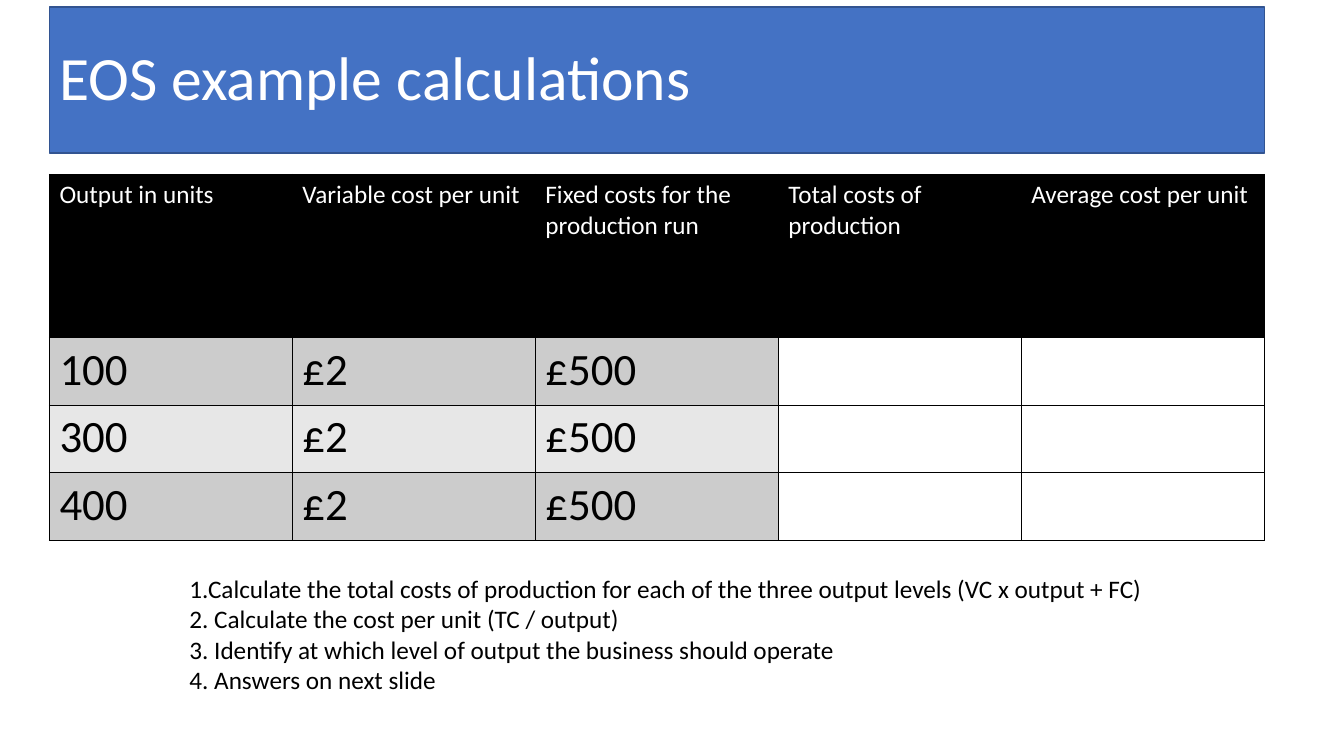
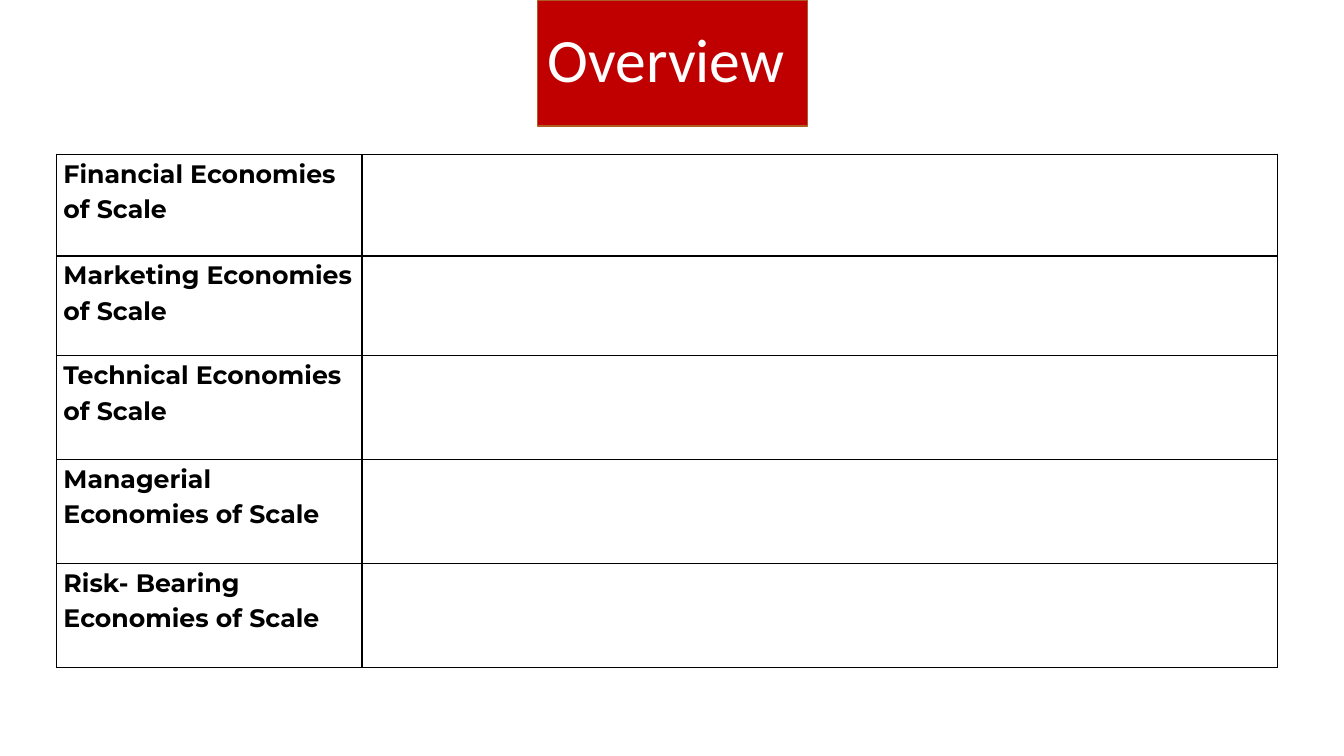
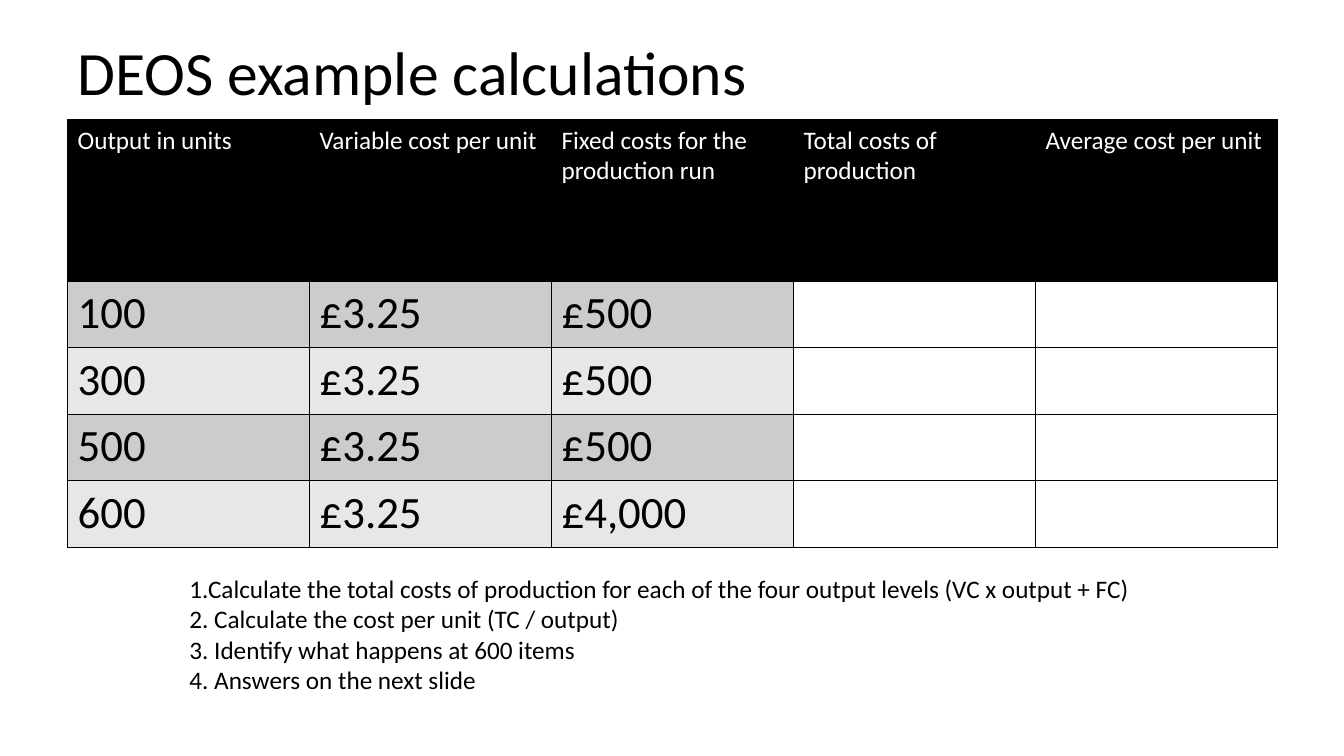
from lxml import etree
from pptx import Presentation
from pptx import util as u
from pptx.dml.color import RGBColor
from pptx.enum import shapes, text
from pptx.oxml.ns import qn

hue = RGBColor.from_string
BLACK, WHITE = "000000", "FFFFFF"
BANDS = ["CCCCCC", "E7E7E7"]


def write(frame, lines, size, color, font="Calibri", bold=False, lead=1.0):
    frame.word_wrap = True
    for i, line in enumerate(lines):
        para = frame.paragraphs[0] if i == 0 else frame.add_paragraph()
        para.alignment = text.PP_ALIGN.LEFT
        para.line_spacing = lead
        run = para.add_run()
        run.text = line
        look = {"name": font, "size": u.Pt(size), "bold": bold}
        for key, value in look.items():
            setattr(run.font, key, value)
        run.font.color.rgb = hue(color)


def paint(cell, fill):
    cell.fill.solid()
    cell.fill.fore_color.rgb = hue(fill)
    props = cell._tc.get_or_add_tcPr()
    for i, side in enumerate(["lnL", "lnR", "lnT", "lnB"]):
        line = etree.Element(qn("a:" + side), w=str(u.Pt(1)))
        solid = etree.SubElement(line, qn("a:solidFill"))
        etree.SubElement(solid, qn("a:srgbClr"), val=BLACK)
        props.insert(i, line)


heads = ["Output in units", "Variable cost per unit", "Fixed costs for the production run",
         "Total costs of production", "Average cost per unit"]
first = "1.Calculate the total costs of production for each of the {} output levels (VC x output + FC)"
second = "2. Calculate the cost per unit (TC / output)"
kinds = ["Financial", "Marketing", "Technical", "Managerial", "Risk- Bearing"]

pages = [
    {"title": "EOS example calculations", "box": (0.49, 0.07, 12.05, 1.45),
     "fill": "4472C4", "line": "325491", "ink": WHITE,
     "spot": (0.49, 1.73), "cols": [2.41] * 5, "rows": [1.62] + [0.67] * 3,
     "data": [heads] + [[n, "£2", "£500", "", ""] for n in ["100", "300", "400"]],
     "tasks": [first.format("three"), second,
               "3. Identify at which level of output the business should operate",
               "4. Answers on next slide"]},
    {"title": "Overview", "box": (5.33, 0, 2.68, 1.25),
     "fill": "C00000", "line": "AF5C24", "ink": WHITE,
     "spot": (0.56, 1.53), "cols": [3.03, 9.08], "rows": [1.01, 0.99] + [1.03] * 3,
     "data": [[kind + " Economies of Scale", ""] for kind in kinds], "tasks": []},
    {"title": "DEOS example calculations", "box": (0.67, 0.3, 12, 0.89),
     "fill": None, "line": None, "ink": BLACK,
     "spot": (0.67, 1.19), "cols": [2.4] * 5, "rows": [1.6] + [0.66] * 4,
     "data": [heads] + [[n, "£3.25", cost, "", ""] for n, cost in
                        [("100", "£500"), ("300", "£500"), ("500", "£500"), ("600", "£4,000")]],
     "tasks": [first.format("four"), second, "3. Identify what happens at 600 items",
               "4. Answers on the next slide"]},
]

deck = Presentation()
deck.slide_width, deck.slide_height = u.Inches(13.33), u.Inches(7.5)

for page in pages:
    slide = deck.slides.add_slide(deck.slide_layouts[6])
    place = [u.Inches(n) for n in page["box"]]
    if page["fill"]:
        title = slide.shapes.add_shape(shapes.MSO_SHAPE.RECTANGLE, *place)
        title.shadow.inherit = False
        title.fill.solid()
        title.fill.fore_color.rgb = hue(page["fill"])
        title.line.color.rgb = hue(page["line"])
        title.line.width = u.Pt(1)
    else:
        title = slide.shapes.add_textbox(*place)
    title.text_frame.vertical_anchor = text.MSO_ANCHOR.MIDDLE
    write(title.text_frame, [page["title"]], 44, page["ink"], lead=0.9)

    rows, cols, data = page["rows"], page["cols"], page["data"]
    left, top = page["spot"]
    area = [u.Inches(n) for n in (left, top, sum(cols), sum(rows))]
    table = slide.shapes.add_table(len(rows), len(cols), *area).table
    for col, width in zip(table.columns, cols):
        col.width = u.Inches(width)
    for row, height in zip(table.rows, rows):
        row.height = u.Inches(height)
    costs = data[0] == heads
    for r, values in enumerate(data):
        for c, value in enumerate(values):
            cell = table.cell(r, c)
            if not value:
                paint(cell, WHITE)
            elif not costs:
                paint(cell, WHITE)
                pads = {"margin_left": 0.07, "margin_right": 0.07, "margin_top": 0, "margin_bottom": 0}
                for key, pad in pads.items():
                    setattr(cell, key, u.Inches(pad))
                write(cell.text_frame, [value], 18, BLACK, "Montserrat", True, 1.15)
            elif r == 0:
                paint(cell, BLACK)
                write(cell.text_frame, [value], 18, WHITE)
            else:
                paint(cell, BANDS[(r - 1) % 2])
                write(cell.text_frame, [value], 32, BLACK)

    if page["tasks"]:
        note = slide.shapes.add_textbox(*[u.Inches(n) for n in (1.78, 5.64, 9.88, 1.31)])
        write(note.text_frame, page["tasks"], 18, BLACK)

deck.save("out.pptx")
